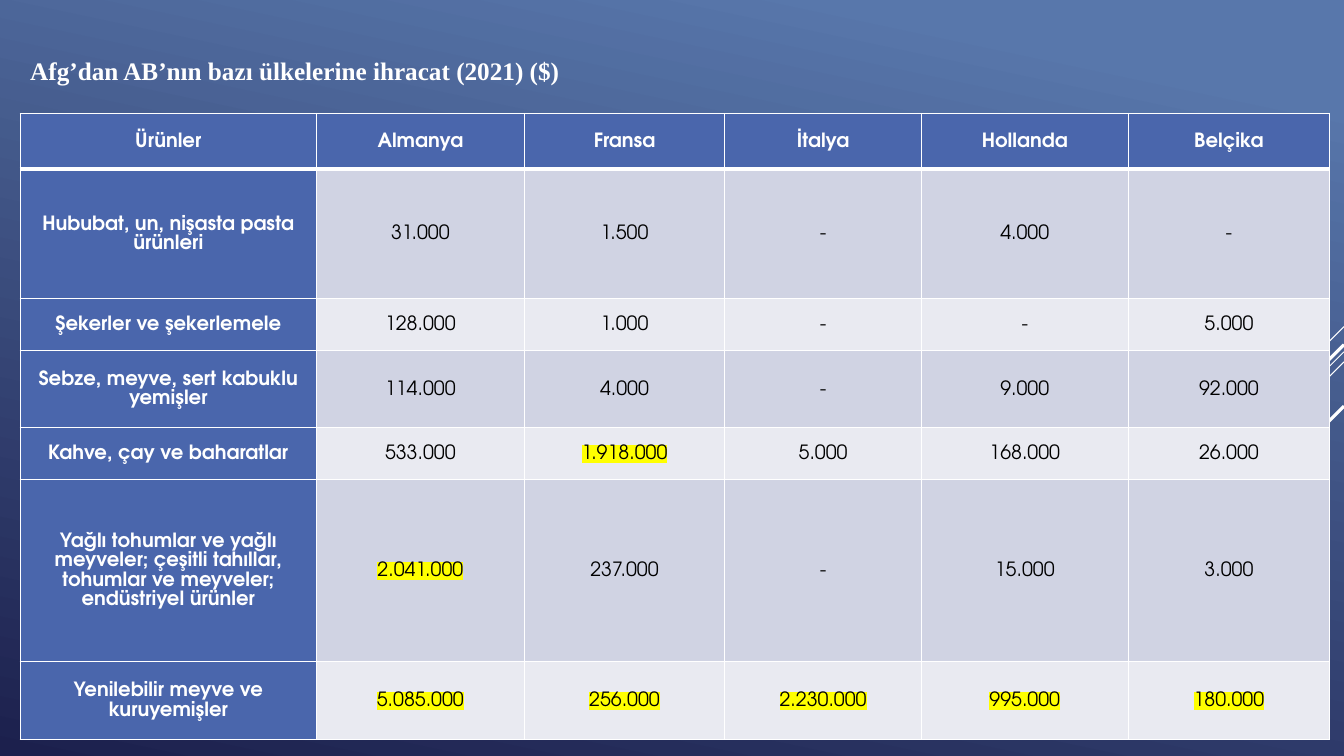
from lxml.etree import SubElement
from pptx import Presentation
from pptx.dml.color import RGBColor
from pptx.enum.shapes import MSO_CONNECTOR
from pptx.enum.text import MSO_ANCHOR, MSO_AUTO_SIZE, PP_ALIGN
from pptx.oxml import parse_xml
from pptx.oxml.ns import nsdecls, qn
from pptx.util import Inches, Pt

WIDTH, HEIGHT = 13.33, 7.5
WHITE, BLACK, BLUE, YELLOW = "FFFFFF", "000000", "4A66AC", "FFFF00"
BANDS = ("D0D3E3", "E9EAF1")

COLUMNS = (2.94, 2.06, 1.99, 1.95, 2.05, 2)
ROWS = (0.55, 1.29, 0.51, 0.77, 0.51, 1.81, 0.77)
EXPORTS = (
    ("Ürünler", "Almanya", "Fransa", "İtalya", "Hollanda", "Belçika"),
    ("Hububat, un, nişasta pasta ürünleri", "31.000", "1.500", "-", "4.000", "-"),
    ("Şekerler ve şekerlemele", "128.000", "1.000", "-", "-", "5.000"),
    ("Sebze, meyve, sert kabuklu yemişler", "114.000", "4.000", "-", "9.000", "92.000"),
    ("Kahve, çay ve baharatlar", "533.000", "1.918.000", "5.000", "168.000", "26.000"),
    ("Yağlı tohumlar ve yağlı meyveler; çeşitli tahıllar, tohumlar ve meyveler; endüstriyel ürünler",
     "2.041.000", "237.000", "-", "15.000", "3.000"),
    ("Yenilebilir meyve ve kuruyemişler",
     "5.085.000", "256.000", "2.230.000", "995.000", "180.000"),
)
HIGHLIGHTED = {(4, 2), (5, 1)} | {(6, column) for column in range(1, 6)}
RAYS = ((3.24, 1, 0.75), (3.49, 3.26, 0.75), (3.59, 2.07, 0.75),
        (3.42, 1.91, 2.25), (4.03, 1.39, 2.25))


def color(value):
    return RGBColor.from_string(value)


def apply(target, formats):
    for attribute, value in formats.items():
        setattr(target, attribute, value)


def write(paragraph, text, font, ink, layout):
    run = paragraph.add_run()
    run.text = text
    apply(run.font, font)
    run.font.color.rgb = color(ink)
    apply(paragraph, layout)
    return run


def paint_background(slide):
    fill = slide.background.fill
    fill.gradient()
    fill.gradient_angle = 360 - 102
    for stop, (position, shade) in zip(fill.gradient_stops, ((0.1, "5877AB"), (1, "1C204D"))):
        stop.position = position
        stop.color.rgb = color(shade)


def draw_rays(slide, right):
    for top, reach, weight in RAYS:
        ray = slide.shapes.add_connector(
            MSO_CONNECTOR.STRAIGHT, Inches(right), Inches(top),
            Inches(right - reach), Inches(top + reach))
        ray.line.color.rgb = color(WHITE)
        ray.line.width = Pt(weight)
        SubElement(ray._element.spPr, qn("a:effectLst"))


def place_title(slide, left, top, width, height):
    title = slide.shapes.title
    apply(title, {"left": Inches(left), "top": Inches(top),
                  "width": Inches(width), "height": Inches(height)})
    apply(title.text_frame, {"word_wrap": True, "vertical_anchor": MSO_ANCHOR.TOP,
                             "auto_size": MSO_AUTO_SIZE.SHAPE_TO_FIT_TEXT})
    write(title.text_frame.paragraphs[0], "Afg’dan AB’nın bazı ülkelerine ihracat (2021) ($)",
          {"name": "Times New Roman", "size": Pt(18), "bold": True}, WHITE,
          {"alignment": PP_ALIGN.LEFT, "line_spacing": 1.07, "space_after": Pt(8)})


def border(cell, weights):
    properties = cell._tc.get_or_add_tcPr()
    for index, (side, weight) in enumerate(weights.items()):
        properties.insert(index, parse_xml(
            f'<a:ln{side} {nsdecls("a")} w="{Pt(weight)}"><a:solidFill>'
            f'<a:srgbClr val="{WHITE}"/></a:solidFill></a:ln{side}>'))


def highlight(run):
    marker = parse_xml(f'<a:highlight {nsdecls("a")}><a:srgbClr val="{YELLOW}"/></a:highlight>')
    run.font._element.find(qn("a:solidFill")).addnext(marker)


def fill_cell(cell, row, column):
    heading = row == 0 or column == 0
    apply(cell, {"vertical_anchor": MSO_ANCHOR.MIDDLE,
                 "margin_left": Inches(0.07), "margin_right": Inches(0.07),
                 "margin_top": 0, "margin_bottom": 0})
    cell.fill.solid()
    cell.fill.fore_color.rgb = color(BLUE if heading else BANDS[(row - 1) % 2])
    border(cell, {"L": 1, "R": 1, "T": 3 if row == 1 else 1, "B": 3 if row == 0 else 1})
    entry = write(cell.text_frame.paragraphs[0], EXPORTS[row][column],
                  {"name": "TeX Gyre Adventor", "size": Pt(14), "bold": heading},
                  WHITE if heading else BLACK,
                  {"alignment": PP_ALIGN.CENTER, "line_spacing": 1.07})
    if (row, column) in HIGHLIGHTED:
        highlight(entry)


def place_exports(slide, left, top):
    exports = slide.shapes.add_table(
        len(ROWS), len(COLUMNS), Inches(left), Inches(top),
        Inches(sum(COLUMNS)), Inches(sum(ROWS))).table
    for column, width in zip(exports.columns, COLUMNS):
        column.width = Inches(width)
    for row, height in enumerate(ROWS):
        exports.rows[row].height = Inches(height)
        for column in range(len(COLUMNS)):
            fill_cell(exports.cell(row, column), row, column)


def build_export_slide(deck):
    slide = deck.slides.add_slide(deck.slide_layouts[5])
    paint_background(slide)
    draw_rays(slide, WIDTH)
    place_title(slide, WIDTH * 0.015, HEIGHT * 0.064, WIDTH * 0.5, HEIGHT * 0.055)
    place_exports(slide, WIDTH * 0.015, HEIGHT * 0.15)


def main():
    deck = Presentation()
    apply(deck, {"slide_width": Inches(WIDTH), "slide_height": Inches(HEIGHT)})
    build_export_slide(deck)
    deck.save("out.pptx")


if __name__ == "__main__":
    main()
